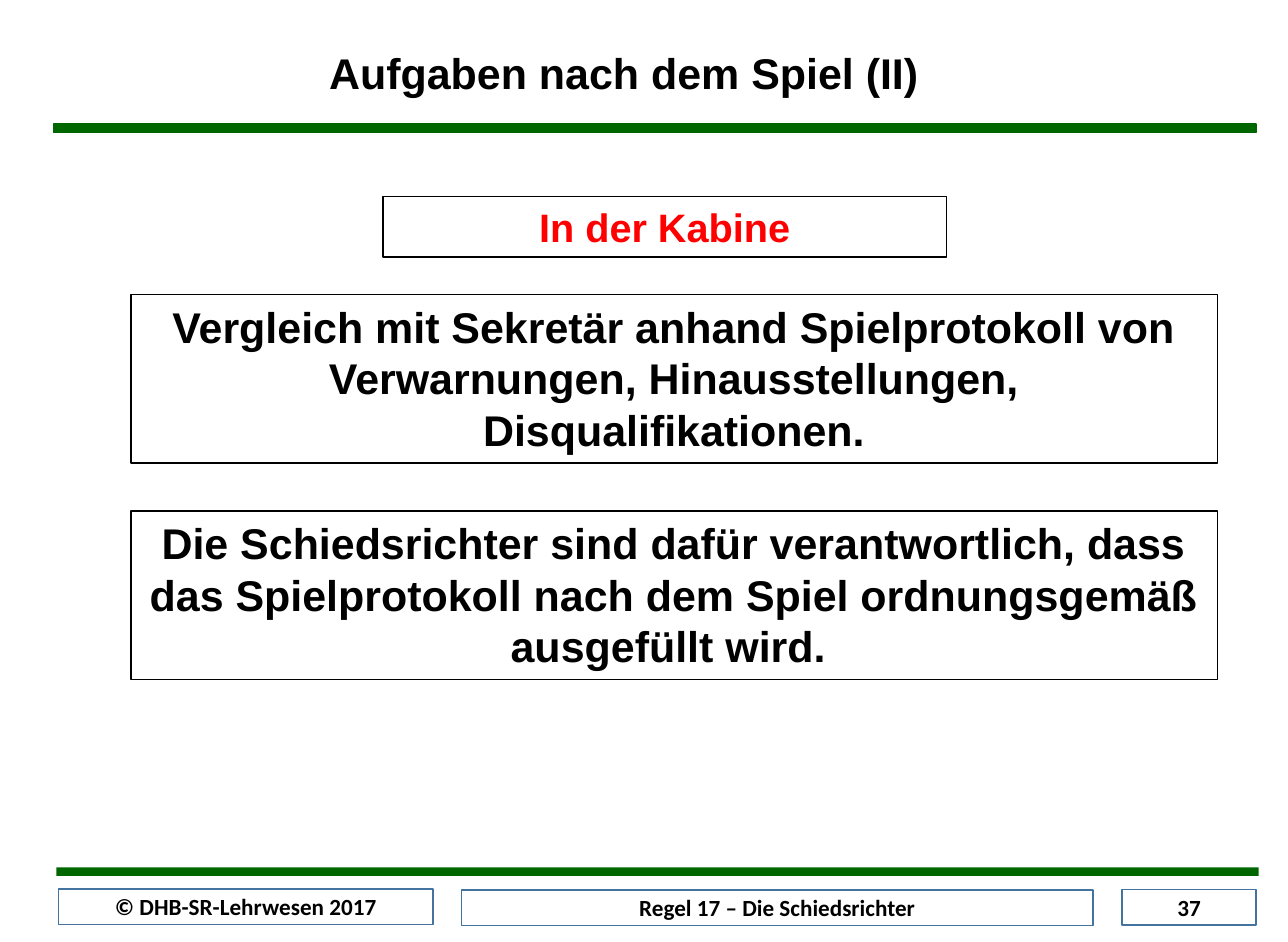
from pptx import Presentation
from pptx.dml.color import RGBColor
from pptx.enum.shapes import MSO_SHAPE
from pptx.enum.text import MSO_ANCHOR, MSO_AUTO_SIZE, PP_ALIGN
from pptx.util import Pt

SLIDE_SIZE = (779.76, 570.24)
COLORS = {"green": "006600", "blue": "43739E", "red": "FF0000",
          "black": "000000", "white": "FFFFFF"}

TITLE = "Aufgaben nach dem Spiel (II)"
TITLE_BOX = (174.5, 24.7, 406.8, 39.6)

# box (left, top, width, height), outline width
BARS = [((32.4, 75.1, 728, 5.2), 0.75), ((34.1, 525.1, 728, 5.2), 0)]

# text, box, size, colour
CONTENT = [
    ("In der Kabine", (231.8, 119, 341.3, 36.7), 24, "red"),
    ("Vergleich mit Sekretär anhand Spielprotokoll von Verwarnungen, "
     "Hinausstellungen, Disqualifikationen.", (79.2, 178.3, 658, 102.2), 26, "black"),
    ("Die Schiedsrichter sind dafür verantwortlich, dass das Spielprotokoll "
     "nach dem Spiel ordnungsgemäß ausgefüllt wird. ", (79.2, 309.2, 658, 102.2), 26, "black"),
]

FOOTER = [
    ("© DHB-SR-Lehrwesen 2017", (35.4, 538.1, 226.8, 21.6)),
    ("Regel 17 – Die Schiedsrichter", (279.4, 538.6, 382.3, 21.6)),
    ("37", (679.2, 538.4, 81.4, 21.6)),
]


def rgb(name):
    return RGBColor.from_string(COLORS[name])


def paint(sp, fill, line, width=1):
    sp.fill.solid()
    sp.fill.fore_color.rgb = rgb(fill)
    if width:
        sp.line.color.rgb = rgb(line)
        sp.line.width = Pt(width)
    else:
        sp.line.fill.background()


def add_rect(s, box, fill, line, width=1):
    sp = s.shapes.add_shape(MSO_SHAPE.RECTANGLE, *map(Pt, box))
    sp.shadow.inherit = False
    paint(sp, fill, line, width)
    return sp


def write(sp, text, size, color="black", font="Arial", anchor=MSO_ANCHOR.TOP):
    tf = sp.text_frame
    tf.text = text
    tf.word_wrap = True
    tf.auto_size = MSO_AUTO_SIZE.NONE
    tf.vertical_anchor = anchor
    tf.margin_left = tf.margin_right = Pt(7.9)
    tf.margin_top = tf.margin_bottom = Pt(3.6)
    p = tf.paragraphs[0]
    p.alignment = PP_ALIGN.CENTER
    r = p.runs[0]
    r.font.name = font
    r.font.size = Pt(size)
    r.font.bold = True
    r.font.color.rgb = rgb(color)


def main():
    prs = Presentation()
    prs.slide_width, prs.slide_height = map(Pt, SLIDE_SIZE)
    s = prs.slides.add_slide(prs.slide_layouts[5])

    title = s.shapes.title
    title.left, title.top, title.width, title.height = map(Pt, TITLE_BOX)
    paint(title, "white", "white")
    write(title, TITLE, 26)

    for box, width in BARS:
        add_rect(s, box, "green", "green", width)
    for text, box, size, color in CONTENT:
        write(add_rect(s, box, "white", "black"), text, size, color)
    for text, box in FOOTER:
        write(add_rect(s, box, "white", "blue"), text, 14,
              font="Calibri", anchor=MSO_ANCHOR.MIDDLE)

    prs.save("out.pptx")


if __name__ == "__main__":
    main()
